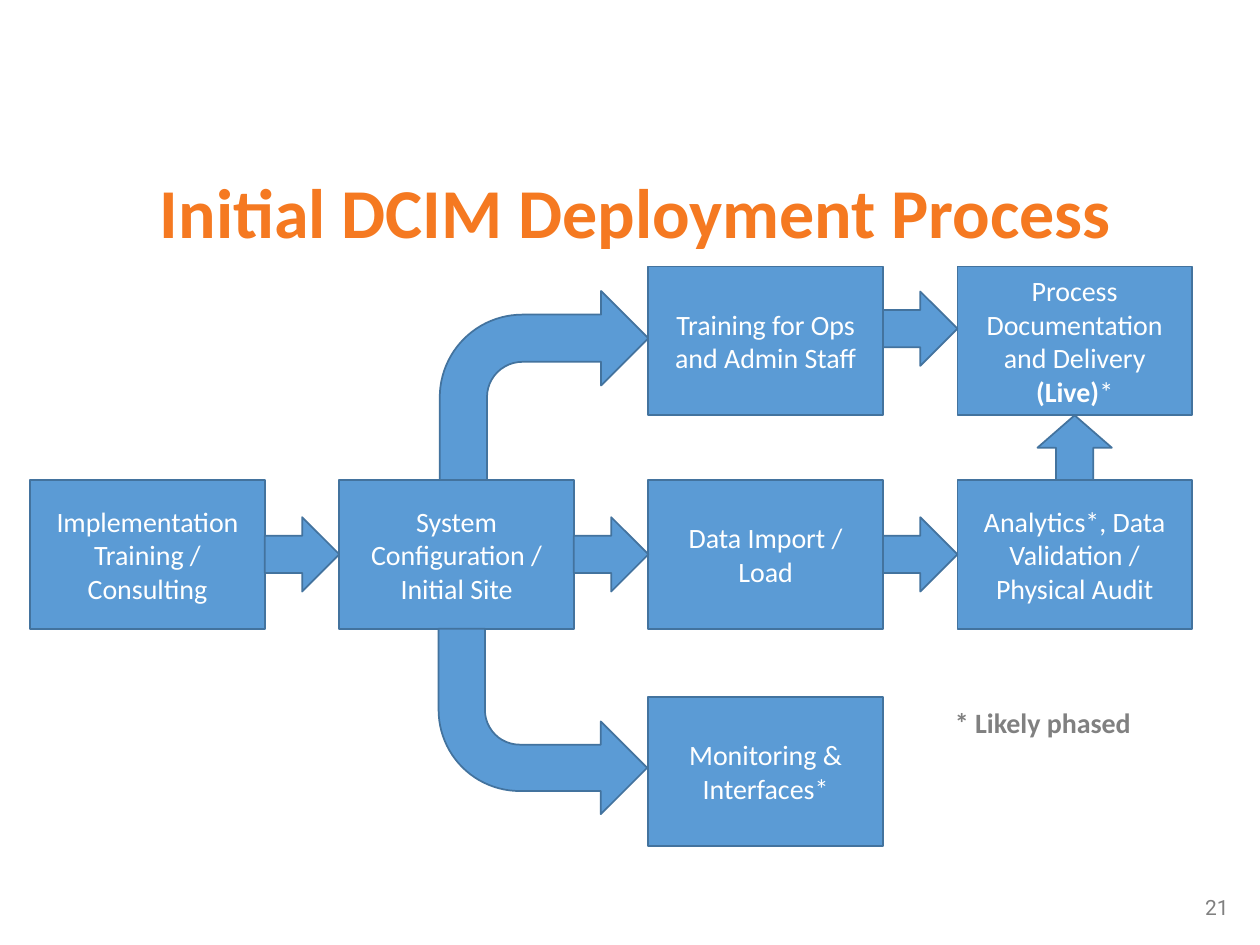
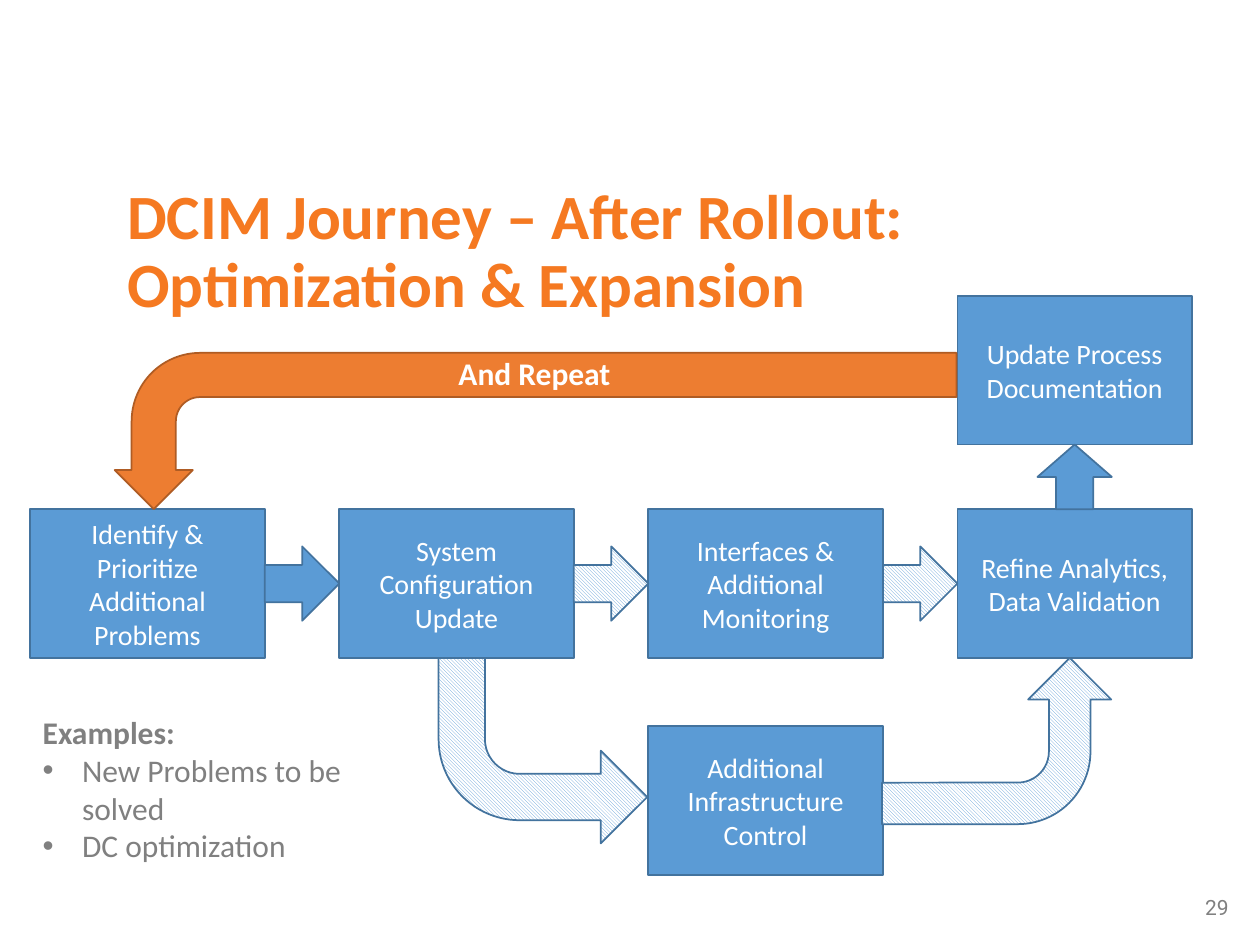
"""Build two flow-chart slides on deploying and extending DCIM."""
from dataclasses import dataclass

from lxml import etree
from pptx import Presentation, util as u
from pptx.dml import color
from pptx.enum import dml, shapes, text
from pptx.oxml import ns


@dataclass(frozen=True)
class Theme:
    blue: str = "5B9BD5"
    blue_edge: str = "43739E"
    orange: str = "ED7D31"
    orange_edge: str = "AF5C24"
    title: str = "F57921"
    grey: str = "808080"
    white: str = "FFFFFF"
    font: str = "Calibri"
    number_font: str = "Roboto"
    box_size: int = 16
    note_size: int = 18
    number_size: int = 12


THEME = Theme()
KIND = shapes.MSO_SHAPE
LEFT, PITCH = 17.3, 176.6
BOX_WIDTH, BOX_HEIGHT = 134, 85
ROW_OFFSETS = {"top": -122, "middle": 0, "bottom": 124}
ARROW_BREADTH = 42.5
BENT_UP = dict(place=(251.3, -108, 119.2, 108))
BENT_DOWN = dict(place=(250.6, 85, 119.2, 106), flip=True)

SLIDES = [
    dict(
        number="21", title="Initial DCIM Deployment Process", title_size=40,
        title_place=(84.2, 97.9, 620.6, 54), middle_top=274.3,
        boxes=[
            (0, "middle", [("Implementation Training / Consulting", False)]),
            (1, "middle", [("System Configuration / Initial Site", False)]),
            (2, "middle", [("Data Import / Load", False)]),
            (3, "middle", [("Analytics*, Data Validation / Physical Audit", False)]),
            (2, "top", [("Training for Ops and Admin Staff", False)]),
            (2, "bottom", [("Monitoring & Interfaces*", False)]),
            (3, "top", [("Process Documentation and Delivery ", False),
                        ("(Live)", True), ("*", False)]),
        ],
        right_arrows=[(0, "middle", 0, False), (1, "middle", 0, False),
                      (2, "middle", 0, False), (2, "top", -7, False)],
        bent_arrows=[BENT_UP, BENT_DOWN],
        notes=[dict(place=(538.6, 399.6, 116.6, 26.6), size=THEME.box_size,
                    colour=THEME.grey, heading="* Likely phased", bullets=[])],
    ),
    dict(
        number="29", title="DCIM Journey – After Rollout:\vOptimization & Expansion",
        title_size=36, title_place=(65.5, 102.2, 654.5, 54), middle_top=291,
        boxes=[
            (0, "middle", [("Identify & Prioritize Additional Problems", False)]),
            (1, "middle", [("System Configuration Update", False)]),
            (2, "middle", [("Interfaces & Additional Monitoring", False)]),
            (3, "middle", [("Refine Analytics, Data Validation", False)]),
            (2, "bottom", [("Additional Infrastructure Control", False)]),
            (3, "top", [("Update Process Documentation", False)]),
        ],
        right_arrows=[(0, "middle", 0, False), (1, "middle", 0, True),
                      (2, "middle", 0, True)],
        bent_arrows=[
            dict(BENT_DOWN, hatched=True),
            dict(place=(261.4, -285.2, 89.3, 481), turn=90, flip=True,
                 adjust=(0.283, 0.25, 0.25, 0.438),
                 fill=THEME.orange, edge=THEME.orange_edge),
            dict(place=(522, 67, 95, 131), turn=270, flip=True, hatched=True),
        ],
        notes=[
            dict(place=(254.9, 198.7, 164.9, 28.8), size=THEME.note_size,
                 colour=THEME.white, heading="And Repeat", bullets=[]),
            dict(place=(17.3, 403.9, 200.9, 94.3), size=THEME.note_size,
                 colour=THEME.grey, heading="Examples:",
                 bullets=["New Problems to be solved", "DC optimization"]),
        ],
    ),
]


def points(values):
    return [u.Pt(value) for value in values]


def rgb(value):
    return color.RGBColor.from_string(value)


def set_font(paragraph, size, colour, bold=False, name=THEME.font):
    font = paragraph.font
    font.name, font.size, font.bold = name, u.Pt(size), bold
    font.color.rgb = rgb(colour)


def add_block(slide, kind, place, turn=0, flip=False, hatched=False, adjust=(),
              fill=THEME.blue, edge=THEME.blue_edge):
    shape = slide.shapes.add_shape(kind, *points(place))
    shape.shadow.inherit = False
    shape.rotation = turn
    if flip:
        shape._element.spPr.find(ns.qn("a:xfrm")).set("flipV", "1")
    for index, value in enumerate(adjust):
        shape.adjustments[index] = value
    if hatched:
        shape.fill.patterned()
        shape.fill.pattern = dml.MSO_PATTERN.DARK_DOWNWARD_DIAGONAL
        shape.fill.fore_color.rgb = rgb(fill)
        shape.fill.back_color.rgb = rgb(THEME.white)
    else:
        shape.fill.solid()
        shape.fill.fore_color.rgb = rgb(fill)
    shape.line.color.rgb = rgb(edge)
    shape.line.width = u.Pt(1)
    return shape


def add_box(slide, left, top, runs):
    shape = add_block(slide, KIND.FLOWCHART_PROCESS, (left, top, BOX_WIDTH, BOX_HEIGHT))
    shape.text_frame.word_wrap = True
    shape.text_frame.vertical_anchor = text.MSO_ANCHOR.MIDDLE
    paragraph = shape.text_frame.paragraphs[0]
    paragraph.alignment = text.PP_ALIGN.CENTER
    set_font(paragraph, THEME.box_size, THEME.white)
    for words, bold in runs:
        run = paragraph.add_run()
        run.text = words
        if bold:
            run.font.bold = True


def add_text_box(slide, place):
    frame = slide.shapes.add_textbox(*points(place)).text_frame
    frame.word_wrap = True
    return frame


def add_note(slide, place, size, colour, heading, bullets):
    frame = add_text_box(slide, place)
    paragraph = frame.paragraphs[0]
    paragraph.text = heading
    set_font(paragraph, size, colour, bold=True)
    for words in bullets:
        paragraph = frame.add_paragraph()
        paragraph.text = words
        properties = paragraph._p.get_or_add_pPr()
        properties.set("marL", str(u.Pt(22.5)))
        properties.set("indent", str(-u.Pt(22.5)))
        etree.SubElement(properties, ns.qn("a:buFont"), typeface="Arial")
        etree.SubElement(properties, ns.qn("a:buChar"), char="•")
        set_font(paragraph, size, colour)


def add_title(slide, words, size, place):
    title = slide.shapes.title
    title.left, title.top, title.width, title.height = points(place)
    frame = title.text_frame
    frame.text = words
    frame.word_wrap = True
    frame.auto_size = text.MSO_AUTO_SIZE.NONE
    frame.vertical_anchor = text.MSO_ANCHOR.TOP
    paragraph = frame.paragraphs[0]
    paragraph.alignment = text.PP_ALIGN.LEFT
    paragraph.line_spacing = 0.9
    set_font(paragraph, size, THEME.title, bold=True)


def add_page_number(slide, number):
    paragraph = add_text_box(slide, (637.9, 507.6, 71.3, 21.6)).paragraphs[0]
    paragraph.text = number
    paragraph.alignment = text.PP_ALIGN.RIGHT
    set_font(paragraph, THEME.number_size, THEME.grey, name=THEME.number_font)


def build_slide(presentation, content):
    slide = presentation.slides.add_slide(presentation.slide_layouts[5])
    middle_top = content["middle_top"]
    rows = {name: middle_top + offset for name, offset in ROW_OFFSETS.items()}
    add_page_number(slide, content["number"])
    add_title(slide, content["title"], content["title_size"], content["title_place"])
    for column, row, runs in content["boxes"]:
        add_box(slide, LEFT + column * PITCH, rows[row], runs)
    for column, row, shift, hatched in content["right_arrows"]:
        left = LEFT + column * PITCH + BOX_WIDTH
        top = rows[row] + (BOX_HEIGHT - ARROW_BREADTH) / 2 + shift
        add_block(slide, KIND.RIGHT_ARROW,
                  (left, top, PITCH - BOX_WIDTH, ARROW_BREADTH), hatched=hatched)
    gap = middle_top - rows["top"] - BOX_HEIGHT
    center_x = LEFT + 3 * PITCH + BOX_WIDTH / 2
    center_y = middle_top - gap / 2
    add_block(slide, KIND.RIGHT_ARROW,
              (center_x - gap / 2, center_y - ARROW_BREADTH / 2, gap, ARROW_BREADTH),
              turn=270)
    for arrow in content["bent_arrows"]:
        left, top, width, height = arrow["place"]
        add_block(slide, KIND.BENT_ARROW,
                  **{**arrow, "place": (left, middle_top + top, width, height)})
    for note in content["notes"]:
        add_note(slide, **note)


def main():
    presentation = Presentation()
    presentation.slide_width, presentation.slide_height = points((720, 540))
    for content in SLIDES:
        build_slide(presentation, content)
    presentation.save("out.pptx")


if __name__ == "__main__":
    main()
